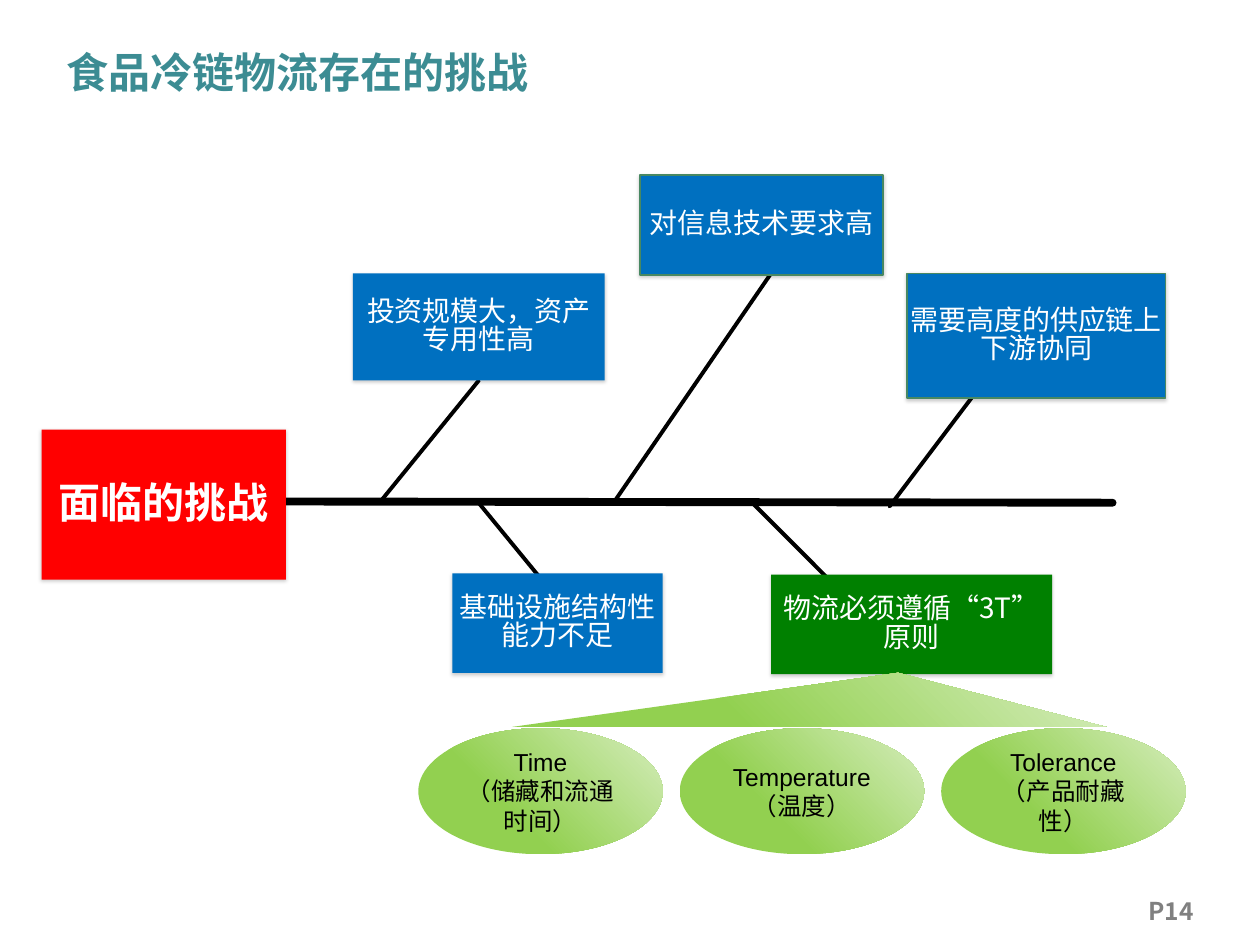
from dataclasses import dataclass
from typing import Optional

from lxml.etree import SubElement
from pptx import Presentation
from pptx.dml.color import RGBColor
from pptx.enum.lang import MSO_LANGUAGE_ID as Lang
from pptx.enum.shapes import MSO_CONNECTOR as Connector, MSO_SHAPE as Preset
from pptx.enum.text import MSO_ANCHOR as Anchor, PP_ALIGN as Align
from pptx.oxml import parse_xml
from pptx.oxml.ns import nsdecls, qn
from pptx.util import Inches, Pt

COLUMNS, ROWS = 100, 75
SLIDE_WIDTH, SLIDE_HEIGHT = Inches(10), Inches(7.5)

WHITE = RGBColor(0xFF, 0xFF, 0xFF)
BLACK = RGBColor(0x00, 0x00, 0x00)
GREY = RGBColor(0x80, 0x80, 0x80)
TEAL = RGBColor(0x3C, 0x8C, 0x93)
RED = RGBColor(0xFF, 0x00, 0x00)
BLUE = RGBColor(0x00, 0x70, 0xC0)
GREEN = RGBColor(0x00, 0x80, 0x00)
EDGE = RGBColor(0x48, 0x88, 0x62)
LIME = RGBColor(0x92, 0xD0, 0x50)
PALE_LIME = RGBColor(0xD6, 0xED, 0xBD)

CHINESE, LATIN = "Noto Sans CJK SC", "Arial"
BOTTOM_SIDE = 2


@dataclass(frozen=True)
class Area:
    column: float
    row: float
    columns: float
    rows: float

    def lengths(self) -> tuple:
        return (across(self.column), down(self.row),
                across(self.columns), down(self.rows))


@dataclass(frozen=True)
class Bone:
    start: tuple
    end: tuple
    weight: float = 2.25


@dataclass(frozen=True)
class Challenge:
    text: str
    area: Area
    bone: Bone
    fill: RGBColor = BLUE
    edge: Optional[RGBColor] = None
    joined: bool = False


SPINE = Bone((21, 39.8), (88.3, 39.9), 4.5)
CHALLENGES = [
    Challenge("投资规模大，资产专用性高", Area(28, 21.7, 20, 8.5),
              Bone((30.2, 39.8), (38.3, 29.8)), joined=True),
    Challenge("基础设施结构性能力不足", Area(35.9, 45.5, 16.7, 7.9),
              Bone((46.1, 49.8), (37.9, 39.8))),
    Challenge("对信息技术要求高", Area(50.8, 13.9, 19.3, 7.9),
              Bone((48.7, 39.9), (61.2, 21.7)), edge=EDGE),
    Challenge("物流必须遵循“3T”\n原则", Area(61.2, 45.6, 22.3, 7.9),
              Bone((65.8, 46), (59.5, 39.7)), fill=GREEN),
    Challenge("需要高度的供应链上下游协同", Area(72, 21.7, 20.5, 9.9),
              Bone((70.6, 40.2), (78.3, 30)), edge=EDGE),
]
PRINCIPLES = ["Time\n（储藏和流通时间）", "Temperature\n（温度）", "Tolerance\n（产品耐藏性）"]
FIRST_PRINCIPLE = Area(33.2, 57.8, 19.4, 10)
PRINCIPLE_STEP = 20.75
FAN = Area(40.6, 53.4, 47.2, 4.3)


def across(columns: float) -> int:
    return round(SLIDE_WIDTH * columns / COLUMNS)


def down(rows: float) -> int:
    return round(SLIDE_HEIGHT * rows / ROWS)


def write(holder, text: str, *, size: float, color: RGBColor, bold: bool = False,
          latin: str = CHINESE, align=Align.CENTER, anchor=Anchor.MIDDLE,
          spacing=None, inset: Optional[float] = None, wrap: bool = True) -> None:
    frame = holder.text_frame
    frame.word_wrap = wrap
    frame.vertical_anchor = anchor
    if inset is not None:
        frame.margin_left = frame.margin_right = Inches(inset)
        frame.margin_top = frame.margin_bottom = Inches(inset)
    frame.text = text
    for paragraph in frame.paragraphs:
        paragraph.alignment = align
        paragraph.line_spacing = spacing
        for run in paragraph.runs:
            font = run.font
            font.size, font.bold, font.name = Pt(size), bold, latin
            font.color.rgb = color
            font.language_id = Lang.SIMPLIFIED_CHINESE
            SubElement(font._element, qn("a:ea"), typeface=CHINESE)


def draw_bone(slide, bone: Bone):
    (left, top), (right, bottom) = bone.start, bone.end
    connector = slide.shapes.add_connector(
        Connector.STRAIGHT, across(left), down(top), across(right), down(bottom))
    connector.line.color.rgb = BLACK
    connector.line.width = Pt(bone.weight)
    connector.line._get_or_add_ln().set("cap", "rnd")
    SubElement(connector._element.spPr, qn("a:effectLst"))
    return connector


def draw_box(slide, area: Area, fill: RGBColor, edge: Optional[RGBColor] = None):
    box = slide.shapes.add_shape(Preset.RECTANGLE, *area.lengths())
    box.fill.solid()
    box.fill.fore_color.rgb = fill
    if edge is None:
        box.line.fill.background()
    else:
        box.line.color.rgb = edge
        box.line.width = Pt(1)
    box._element.spPr.append(parse_xml(
        f'<a:effectLst {nsdecls("a")}><a:outerShdw blurRad="{Pt(2)}" dist="{Pt(1)}" '
        f'dir="5400000" rotWithShape="0"><a:srgbClr val="{BLACK}">'
        '<a:alpha val="20000"/></a:srgbClr></a:outerShdw></a:effectLst>'))
    return box


def draw_lime(slide, preset: Preset, area: Area):
    shape = slide.shapes.add_shape(preset, *area.lengths())
    shape.shadow.inherit = False
    shape.line.fill.background()
    stops = "".join(
        f'<a:gs pos="{share * 1000}"><a:srgbClr val="{color}"/></a:gs>'
        for share, color in ((0, LIME), (36, LIME), (100, PALE_LIME)))
    shape._element.spPr.find(qn("a:prstGeom")).addnext(parse_xml(
        f'<a:gradFill {nsdecls("a")} rotWithShape="1"><a:gsLst>{stops}</a:gsLst>'
        '<a:lin ang="18900000" scaled="0"/></a:gradFill>'))
    return shape


def draw_challenge(slide, challenge: Challenge) -> None:
    bone = draw_bone(slide, challenge.bone)
    box = draw_box(slide, challenge.area, challenge.fill, challenge.edge)
    write(box, challenge.text, size=16, color=WHITE, spacing=0.85, inset=0.02)
    if challenge.joined:
        bone.end_connect(box, BOTTOM_SIDE)


def main() -> None:
    deck = Presentation()
    deck.slide_width, deck.slide_height = SLIDE_WIDTH, SLIDE_HEIGHT
    slide = deck.slides.add_slide(deck.slide_layouts[6])

    page_number = slide.shapes.add_textbox(*Area(89.8, 70.6, 6.3, 3).lengths())
    write(page_number, "P14", size=14, color=GREY, bold=True,
          anchor=Anchor.TOP, wrap=False)
    draw_bone(slide, SPINE)
    title = slide.shapes.add_textbox(*Area(4.3, 1.7, 57.9, 8).lengths())
    write(title, "食品冷链物流存在的挑战", size=24, color=TEAL, bold=True, align=Align.LEFT)
    head = draw_box(slide, Area(3.3, 34.1, 19.4, 11.9), RED)
    write(head, "面临的挑战", size=24, color=WHITE, bold=True, spacing=Pt(25), inset=0.02)

    for challenge in CHALLENGES:
        draw_challenge(slide, challenge)

    first = FIRST_PRINCIPLE
    for index, principle in enumerate(PRINCIPLES):
        area = Area(first.column + index * PRINCIPLE_STEP, first.row,
                    first.columns, first.rows)
        oval = draw_lime(slide, Preset.OVAL, area)
        write(oval, principle, size=14, color=BLACK, latin=LATIN)
    fan = draw_lime(slide, Preset.ISOSCELES_TRIANGLE, FAN)
    fan.adjustments[0] = 0.65

    deck.save("out.pptx")


if __name__ == "__main__":
    main()
